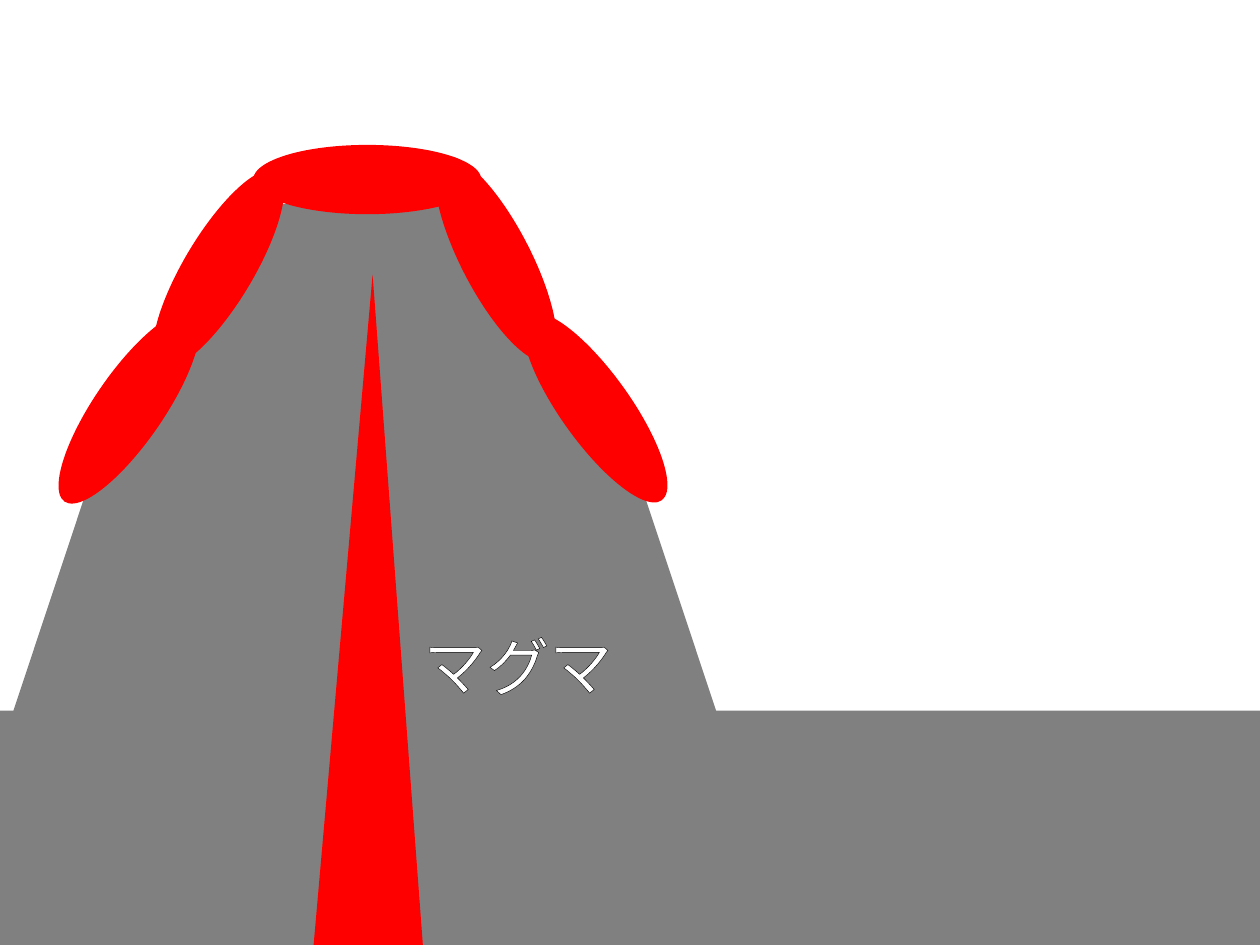
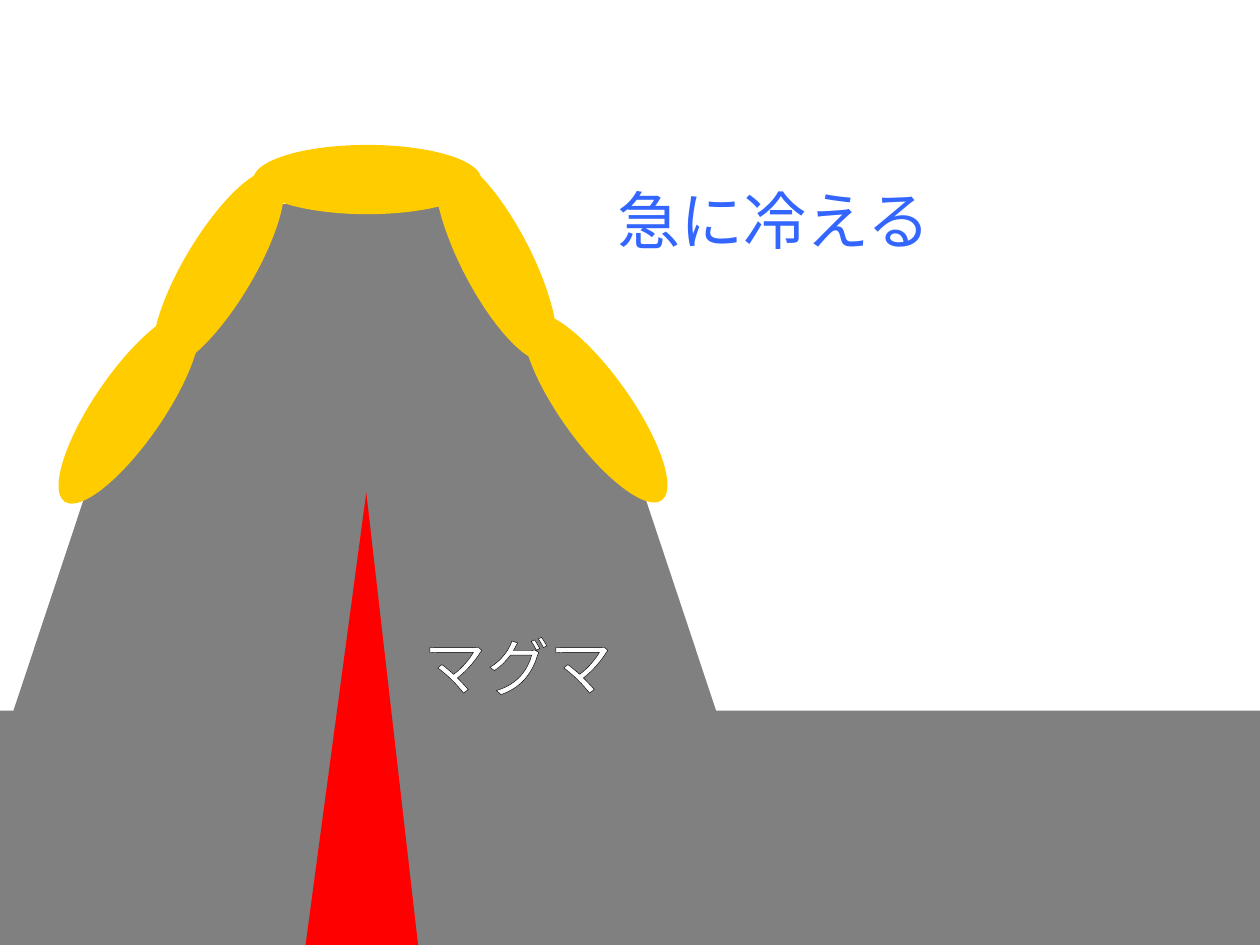
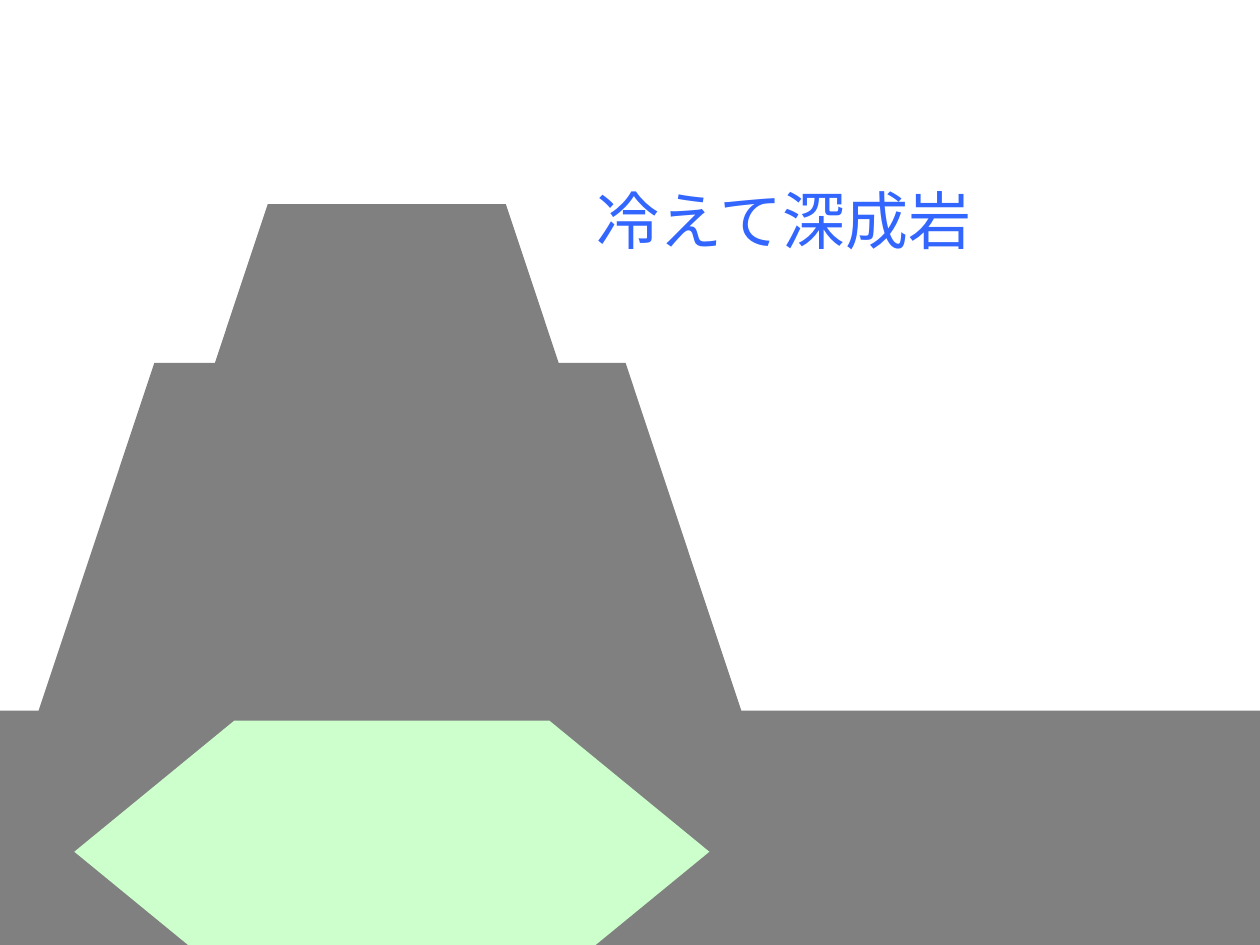
import pptx
import pptx.util
import pptx.dml.color
import pptx.enum.lang
import pptx.enum.shapes
import pptx.enum.text
import pptx.oxml
import pptx.oxml.ns

SHAPES = pptx.enum.shapes.MSO_SHAPE
ROCK = pptx.dml.color.RGBColor(0x80, 0x80, 0x80)
MAGMA = pptx.dml.color.RGBColor(0xFF, 0x00, 0x00)
COOLING_LAVA = pptx.dml.color.RGBColor(0xFF, 0xCC, 0x00)
PLUTONIC_ROCK = pptx.dml.color.RGBColor(0xCC, 0xFF, 0xCC)
CAPTION = pptx.dml.color.RGBColor(0x33, 0x66, 0xFF)
WHITE = pptx.dml.color.RGBColor(0xFF, 0xFF, 0xFF)
BLACK = pptx.dml.color.RGBColor(0x00, 0x00, 0x00)

WIDTH = pptx.util.Inches(10)
HEIGHT = pptx.util.Inches(7.5)
COLUMN = WIDTH / 100
ROW = HEIGHT / 75

FONT = "Noto Sans CJK JP"
LABEL_FONT = {
    "name": FONT,
    "size": pptx.util.Pt(36),
    "language_id": pptx.enum.lang.MSO_LANGUAGE_ID.JAPANESE,
}
LABEL_FRAME = {
    "word_wrap": False,
    "margin_left": 0,
    "margin_right": 0,
    "margin_top": pptx.util.Inches(0.05),
    "margin_bottom": 0,
    "vertical_anchor": pptx.enum.text.MSO_ANCHOR.TOP,
}

SLOPE_WIDTH, SLOPE_HEIGHT = 37.8, 28.4
SLOPE_STARTS = [(0.8, 28.8), (19.3, 28.8), (9.8, 16.2)]
LAVA_WIDTH, LAVA_HEIGHT = 18.1, 5.5
LAVA_FLOWS = [
    (20.1, 11.5, 0),
    (30.3, 17.8, 62.6),
    (8.3, 18.6, 300.9),
    (38.2, 29.6, 54.4),
    (1.2, 29.6, 304.5),
]


def set_values(target, values):
    for name, value in values.items():
        setattr(target, name, value)


def grid_point(column, row):
    return round(column * COLUMN), round(row * ROW)


def grid_box(left, top, width, height):
    return grid_point(left, top) + grid_point(width, height)


def paint(part, colour):
    part.shadow.inherit = False
    part.fill.solid()
    part.fill.fore_color.rgb = colour
    part.line.fill.background()


def add_part(shapes, kind, box, colour, rotation=0, bend=None):
    part = shapes.add_shape(kind, *grid_box(*box))
    part.rotation = rotation
    if bend is not None:
        part.adjustments[0] = bend
    paint(part, colour)


def add_slope(shapes, left, top):
    right, bottom = left + SLOPE_WIDTH, top + SLOPE_HEIGHT
    inset = SLOPE_WIDTH / 4
    outline = shapes.build_freeform(*grid_point(right, bottom))
    corners = [(right - inset, top), (left + inset, top), (left, bottom)]
    outline.add_line_segments(
        [grid_point(*corner) for corner in corners], close=True)
    paint(outline.convert_to_shape(), ROCK)


def add_volcano(slide, ground_left=-2, shift=0):
    volcano = slide.shapes.add_group_shape().shapes
    add_part(volcano, SHAPES.RECTANGLE, (ground_left, 56.4, 105.1, 18.6), ROCK)
    for left, top in SLOPE_STARTS:
        add_slope(volcano, left + shift, top)


def add_lava(shapes, colour):
    for left, top, rotation in LAVA_FLOWS:
        add_part(shapes, SHAPES.OVAL, (left, top, LAVA_WIDTH, LAVA_HEIGHT),
                 colour, rotation)


def add_label(slide, text, box, colour):
    label = slide.shapes.add_textbox(*grid_box(*box))
    set_values(label.text_frame, LABEL_FRAME)
    paragraph = label.text_frame.paragraphs[0]
    paragraph.alignment = pptx.enum.text.PP_ALIGN.CENTER
    run = paragraph.add_run()
    run.text = text
    set_values(run.font, LABEL_FONT)
    run.font.color.rgb = colour
    properties = run.font._element
    properties.append(properties.makeelement(
        pptx.oxml.ns.qn("a:ea"), {"typeface": FONT}))
    return properties


def add_magma(slide, vent):
    add_part(slide.shapes, SHAPES.ISOSCELES_TRIANGLE, vent, MAGMA, bend=0.54)
    properties = add_label(slide, "マグマ", (33.5, 49.3, 15.2, 5), WHITE)
    outline = pptx.oxml.parse_xml(
        f'<a:ln {pptx.oxml.ns.nsdecls("a")} w="{pptx.util.Pt(0.75)}">'
        f'<a:solidFill><a:srgbClr val="{BLACK}"/></a:solidFill></a:ln>')
    properties.insert(0, outline)


def main():
    deck = pptx.Presentation()
    set_values(deck, {"slide_width": WIDTH, "slide_height": HEIGHT})
    eruption, cooling, plutonic = [
        deck.slides.add_slide(deck.slide_layouts[6]) for _ in range(3)]

    add_volcano(eruption)
    add_magma(eruption, (23.2, 21.8, 11.8, 72.4))
    add_lava(eruption.shapes, MAGMA)

    add_volcano(cooling)
    add_magma(cooling, (24, 39.1, 9.4, 37.8))
    add_lava(cooling.shapes.add_group_shape().shapes, COOLING_LAVA)
    add_label(cooling, "急に冷える", (45.3, 13.9, 32.3, 7.9), CAPTION)

    add_volcano(plutonic, ground_left=0, shift=2)
    add_label(plutonic, "冷えて深成岩", (45.3, 13.9, 33.9, 7.9), CAPTION)
    add_part(plutonic.shapes, SHAPES.HEXAGON, (5.9, 57.2, 50.4, 20.8),
             PLUTONIC_ROCK, bend=0.61)

    deck.save("out.pptx")


if __name__ == "__main__":
    main()
